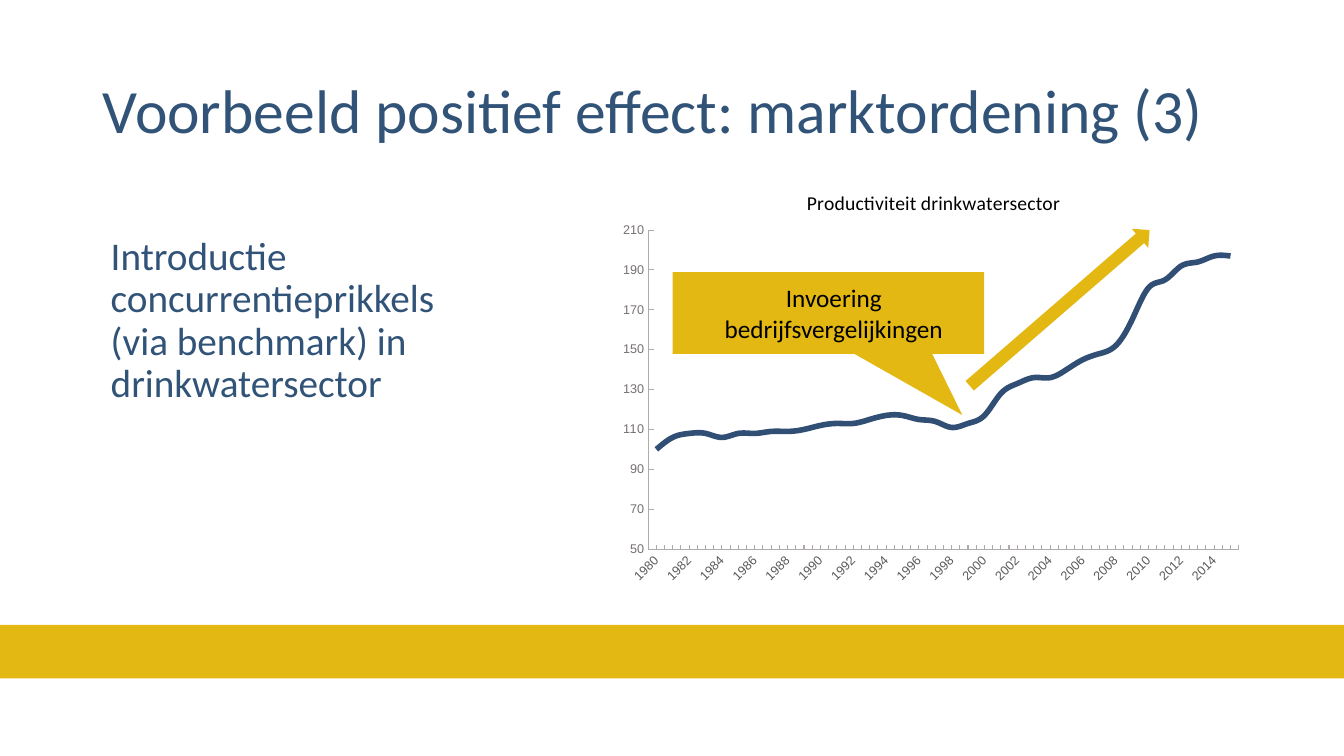
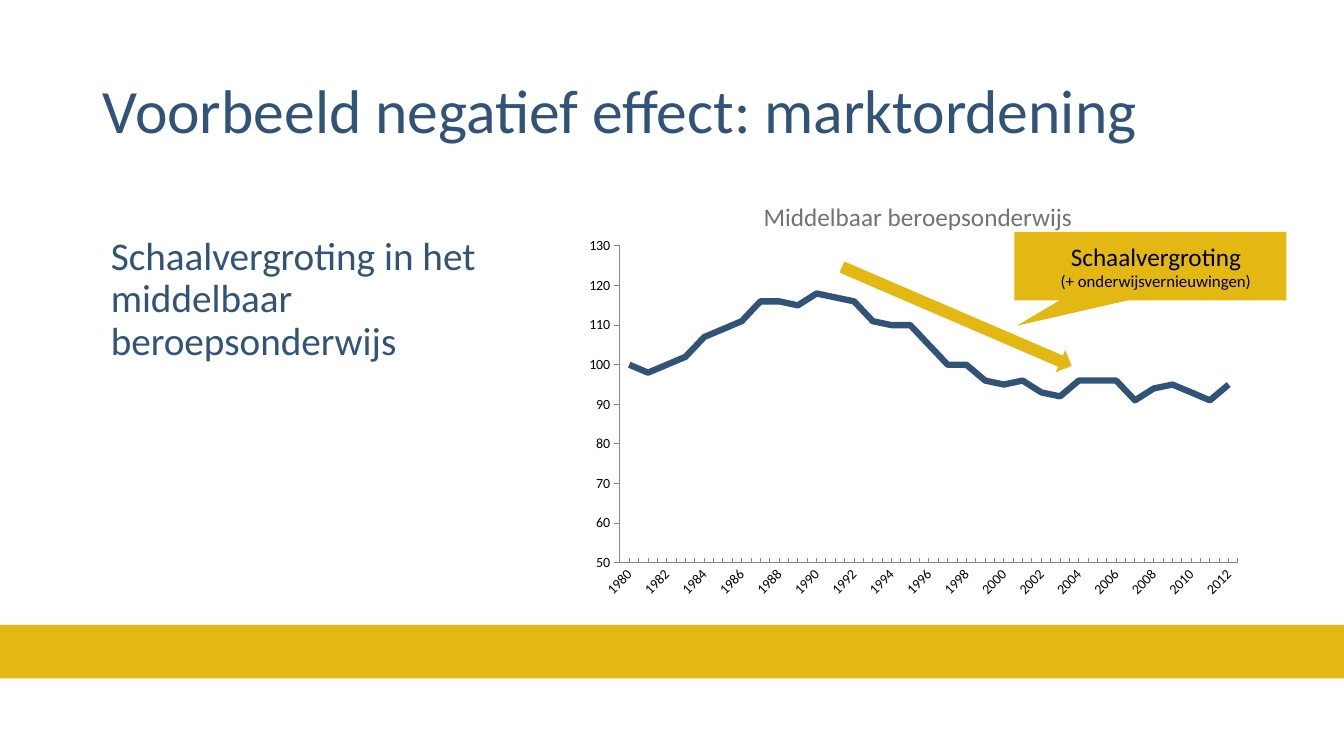
from dataclasses import dataclass

from lxml import etree
from pptx import Presentation
from pptx.chart.data import CategoryChartData
from pptx.dml.color import RGBColor
from pptx.enum.chart import XL_CHART_TYPE, XL_TICK_MARK
from pptx.enum.shapes import MSO_SHAPE
from pptx.enum.text import MSO_ANCHOR, PP_ALIGN
from pptx.oxml.ns import qn
from pptx.util import Inches, Pt

RECTANGLE = MSO_SHAPE.RECTANGLE
ARROW = MSO_SHAPE.RIGHT_ARROW
CALLOUT = MSO_SHAPE.RECTANGULAR_CALLOUT
LINE = XL_CHART_TYPE.LINE
TICK_NONE, TICK_IN, TICK_OUT = XL_TICK_MARK.NONE, XL_TICK_MARK.INSIDE, XL_TICK_MARK.OUTSIDE
TOP, MIDDLE = MSO_ANCHOR.TOP, MSO_ANCHOR.MIDDLE
LEFT, CENTER = PP_ALIGN.LEFT, PP_ALIGN.CENTER


@dataclass(frozen=True)
class Theme:
    """Colours, fonts and type sizes of the deck."""
    blue: RGBColor = RGBColor(0x31, 0x53, 0x78)
    curve: RGBColor = RGBColor(0x31, 0x4F, 0x75)
    gold: RGBColor = RGBColor(0xE3, 0xB8, 0x13)
    black: RGBColor = RGBColor(0, 0, 0)
    gray: RGBColor = RGBColor(0x76, 0x71, 0x71)
    dark_gray: RGBColor = RGBColor(0x59, 0x59, 0x59)
    light_gray: RGBColor = RGBColor(0xAF, 0xAB, 0xAB)
    axis_gray: RGBColor = RGBColor(0x86, 0x86, 0x86)
    font: str = "Calibri"
    axis_font: str = "Arial"
    title: int = 44
    body: int = 28
    label: int = 18
    chart_title: int = 14
    note: int = 12
    axis: int = 10
    small_axis: int = 9


@dataclass(frozen=True)
class ChartStyle:
    """Look of one line chart."""
    title_size: int
    title_color: RGBColor
    title_spot: tuple
    plot_area: tuple
    maximum: int
    step: int
    value_tick: XL_TICK_MARK
    axis_font: str
    axis_size: int
    value_color: RGBColor
    category_color: RGBColor
    axis_line: RGBColor
    line_color: RGBColor
    line_width: float
    smooth: bool


THEME = Theme()

PRODUCTIVITY_STYLE = ChartStyle(
    title_size=THEME.chart_title, title_color=THEME.black, title_spot=(0.3, 0.045),
    plot_area=(0.058, 0.15, 0.921, 0.75), maximum=210, step=20, value_tick=TICK_IN,
    axis_font=THEME.axis_font, axis_size=THEME.small_axis, value_color=THEME.gray,
    category_color=THEME.dark_gray, axis_line=THEME.light_gray,
    line_color=THEME.curve, line_width=4, smooth=True)

EDUCATION_STYLE = ChartStyle(
    title_size=THEME.label, title_color=THEME.gray, title_spot=(0.27, 0.045),
    plot_area=(0.064, 0.164, 0.915, 0.736), maximum=130, step=10, value_tick=TICK_OUT,
    axis_font=THEME.font, axis_size=THEME.axis, value_color=THEME.black,
    category_color=THEME.black, axis_line=THEME.axis_gray,
    line_color=THEME.blue, line_width=4.5, smooth=False)

FIRST_YEAR = 1980
PRODUCTIVITY = [
    100, 106, 108, 108, 106, 108, 108, 109, 109, 110, 112, 113, 113, 115, 117, 117, 115, 114,
    111, 113, 117, 128, 133, 136, 136, 140, 145, 148, 152, 165, 181, 185, 192, 194, 197, 197]
EDUCATION = [
    100, 98, 100, 102, 107, 109, 111, 116, 116, 115, 118, 117, 116, 111, 110, 110, 105, 100,
    100, 96, 95, 96, 93, 92, 96, 96, 96, 91, 94, 95, 93, 91, 95]


def style_font(font, size, color, name=THEME.font):
    """Set the face, size and colour of a font."""
    font.name = name
    font.size = Pt(size)
    font.color.rgb = color
    font.bold = False


def add_span(para, text, size, color):
    """Add one styled run."""
    span = para.add_run()
    span.text = text
    style_font(span.font, size, color)


def add_text(page, area, lines, size, anchor):
    """Add a blue paragraph whose lines are split by line breaks."""
    box = page.shapes.add_textbox(*map(Inches, area))
    frame = box.text_frame
    frame.word_wrap = True
    frame.vertical_anchor = anchor
    para = frame.paragraphs[0]
    para.alignment = LEFT
    para.line_spacing = 0.9
    for index, line in enumerate(lines):
        if index:
            para.add_line_break()
        add_span(para, line, size, THEME.blue)


def add_gold_shape(page, kind, area, rotation=0):
    """Add a flat gold shape without outline."""
    shape = page.shapes.add_shape(kind, *map(Inches, area))
    shape.shadow.inherit = False
    shape.fill.solid()
    shape.fill.fore_color.rgb = THEME.gold
    shape.line.fill.background()
    shape.rotation = rotation
    return shape


def add_callout(page, area, pointer, lines):
    """Add a callout with one centred paragraph per line."""
    shape = add_gold_shape(page, CALLOUT, area)
    for index, value in enumerate(pointer):
        shape.adjustments[index] = value
    frame = shape.text_frame
    frame.word_wrap = True
    frame.vertical_anchor = MIDDLE
    for index, (text, size) in enumerate(lines):
        para = frame.add_paragraph() if index else frame.paragraphs[0]
        para.alignment = CENTER
        para._p.get_or_add_pPr().set("marL", str(Inches(0.11)))
        add_span(para, text, size, THEME.black)


def set_layout(parent, index, fractions, inner=False):
    """Place a chart part by fractions of the chart area."""
    for old in parent.findall(qn("c:layout")):
        parent.remove(old)
    layout = etree.Element(qn("c:layout"))
    manual = etree.SubElement(layout, qn("c:manualLayout"))
    settings = [("layoutTarget", "inner")] if inner else []
    settings += [("xMode", "edge"), ("yMode", "edge")]
    settings += zip("xywh", fractions)
    for name, value in settings:
        etree.SubElement(manual, qn(f"c:{name}")).set("val", str(value))
    parent.insert(index, layout)


def style_axis(axis, style, color, major, minor):
    """Set the line, ticks and labels of an axis."""
    axis.has_major_gridlines = False
    axis.major_tick_mark = major
    axis.minor_tick_mark = minor
    axis.format.line.color.rgb = style.axis_line
    axis.format.line.width = Pt(0.75)
    style_font(axis.tick_labels.font, style.axis_size, color, style.axis_font)


def add_line_chart(page, area, title, values, style):
    """Add a yearly line chart."""
    data = CategoryChartData()
    data.categories = [str(FIRST_YEAR + offset) for offset in range(len(values))]
    data.add_series("Series 1", values)
    chart = page.shapes.add_chart(LINE, *map(Inches, area), data).chart
    style_font(chart.font, THEME.axis, THEME.black)
    chart.has_legend = False
    chart.has_title = True
    para = chart.chart_title.text_frame.paragraphs[0]
    add_span(para, title, style.title_size, style.title_color)
    set_layout(chart.chart_title._element, 1, style.title_spot)
    plot = chart.plots[0]
    plot.vary_by_categories = False
    set_layout(plot._element.getparent(), 0, style.plot_area, inner=True)

    years = chart.category_axis
    style_axis(years, style, style.category_color, TICK_NONE, TICK_IN)
    years._element.txPr.find(qn("a:bodyPr")).set("rot", str(-45 * 60000))
    scale = chart.value_axis
    style_axis(scale, style, style.value_color, style.value_tick, TICK_NONE)
    scale.minimum_scale = 50
    scale.maximum_scale = style.maximum
    scale.major_unit = style.step

    series = plot.series[0]
    series.smooth = style.smooth
    series.format.line.color.rgb = style.line_color
    series.format.line.width = Pt(style.line_width)


def add_page(deck, title, body, body_width):
    """Add a page with the shared band, title and body text."""
    page = deck.slides.add_slide(deck.slide_layouts[6])
    add_gold_shape(page, RECTANGLE, (0, 6.2, 13.33, 0.53))
    add_text(page, (0.92, 0.4, 11.5, 1.45), [title], THEME.title, MIDDLE)
    add_text(page, (1, 2.3, body_width, 2.93), body, THEME.body, TOP)
    return page


def main():
    """Build and save the deck."""
    deck = Presentation()
    deck.slide_width = Inches(13.33)
    deck.slide_height = Inches(7.5)

    page = add_page(
        deck, "Voorbeeld positief effect: marktordening (3)",
        ["Introductie concurrentieprikkels", "(via benchmark) in drinkwatersector"], 3.6)
    add_line_chart(page, (6.06, 1.65, 6.36, 4.22), "Productiviteit drinkwatersector",
                   PRODUCTIVITY, PRODUCTIVITY_STYLE)
    add_gold_shape(page, ARROW, (9.33, 2.93, 2.36, 0.25), 319.1)
    add_callout(page, (6.67, 2.7, 3.09, 0.81), (0.43, 1.25),
                [("Invoering bedrijfsvergelijkingen", THEME.label)])

    page = add_page(
        deck, "Voorbeeld negatief effect: marktordening",
        ["Schaalvergroting in het middelbaar beroepsonderwijs"], 4.38)
    add_line_chart(page, (5.72, 1.74, 6.7, 4.27), "Middelbaar beroepsonderwijs",
                   EDUCATION, EDUCATION_STYLE)
    add_gold_shape(page, ARROW, (8.25, 3.02, 2.48, 0.24), 23.3)
    add_callout(page, (10.06, 2.3, 2.7, 0.68), (-0.49, 0.87),
                [("Schaalvergroting", THEME.label),
                 ("(+ onderwijsvernieuwingen)", THEME.note)])

    deck.save("out.pptx")


if __name__ == "__main__":
    main()
